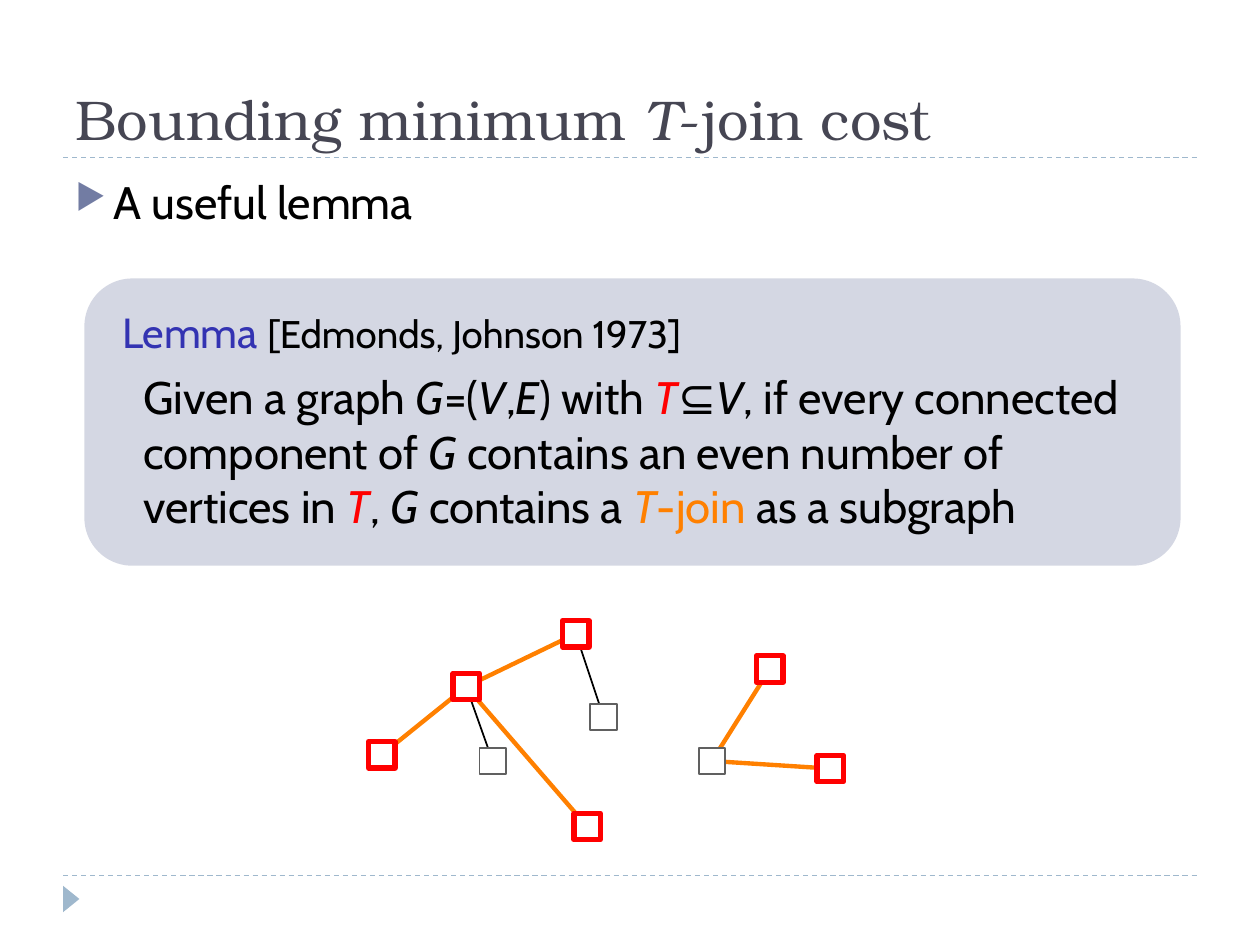
from dataclasses import dataclass

from lxml import etree
from pptx import Presentation
from pptx import util as u
from pptx.dml.color import RGBColor
from pptx.enum import dml, shapes, text
from pptx.oxml.ns import qn

Inches, Pt = u.Inches, u.Pt


@dataclass(frozen=True)
class Theme:
    head_font: str = "TeX Gyre Bonum"
    body_font: str = "Cabin"
    title: str = "464653"
    ink: str = "000000"
    white: str = "FFFFFF"
    accent: str = "727CA3"
    rule: str = "9FB8CD"
    lemma: str = "3333B2"
    terminal: str = "FF0000"
    join: str = "FF8000"
    vertex: str = "606060"
    title_size: int = 32
    body_size: int = 26
    lemma_size: int = 24
    cite_size: int = 22


T = Theme()


def rgb(value):
    return RGBColor.from_string(value)


def sub(parent, tag, **attrs):
    return etree.SubElement(parent, qn(tag), attrs)


def add_shape(s, kind, box, fill, line=None, width=1):
    sp = s.shapes.add_shape(kind, *map(Inches, box))
    sp.shadow.inherit = False
    sp.fill.solid()
    sp.fill.fore_color.rgb = rgb(fill)
    if line:
        sp.line.color.rgb = rgb(line)
        sp.line.width = Pt(width)
    else:
        sp.line.fill.background()
    return sp


def add_line(s, start, end, color, width):
    c = s.shapes.add_connector(shapes.MSO_CONNECTOR.STRAIGHT,
                               *map(Inches, (*start, *end)))
    c.line.color.rgb = rgb(color)
    c.line.width = Pt(width)
    sub(c._element.spPr, "a:effectLst")
    return c


def add_text(s, box, runs, size, font=T.body_font, before=0,
             anchor=text.MSO_ANCHOR.TOP):
    """Each run is (text, format); *stars* in its text mark italics."""
    tf = s.shapes.add_textbox(*map(Inches, box)).text_frame
    tf.word_wrap = True
    tf.vertical_anchor = anchor
    p = tf.paragraphs[0]
    p.space_before = Pt(before)
    for words, fmt in runs:
        for i, part in enumerate(words.split("*")):
            if part:
                r = p.add_run()
                r.text = part
                r.font.color.rgb = rgb(fmt.get("color", T.ink))
                values = {"name": font, "size": Pt(fmt.get("size", size)),
                          "italic": i % 2 == 1}
                for name, value in values.items():
                    setattr(r.font, name, value)
    return p


def add_frame(s, left, width):
    """Dashed rules and the footer marker."""
    for y in (6.95, 1.25):
        c = add_line(s, (left, y), (left + width, y), T.rule, 0.75)
        c.line.dash_style = dml.MSO_LINE.DASH
    marker = add_shape(s, shapes.MSO_SHAPE.ISOSCELES_TRIANGLE,
                       (left - 0.04, 7.07, 0.21, 0.13), T.rule)
    marker.rotation = 90


def add_heading(s, left, width):
    """Title above the rule, bullet below it."""
    add_text(s, (left, 0.17, width, 1.08),
             [("Bounding minimum *T*-join cost", {"color": T.title})],
             T.title_size, T.head_font, anchor=text.MSO_ANCHOR.BOTTOM)
    p = add_text(s, (left, 1.33, width, 0.6), [("A useful lemma", {})],
                 T.body_size, before=6)
    pPr = p._p.get_or_add_pPr()
    indent = Inches(0.3)
    pPr.set("marL", str(indent))
    pPr.set("indent", str(-indent))
    sub(sub(pPr, "a:buClr"), "a:srgbClr", val=T.accent)
    sub(pPr, "a:buSzPct", val="76000")
    sub(pPr, "a:buChar", char="▶")


def add_lemma(s, left, top, width, height):
    """Tinted panel with the lemma's name and statement."""
    panel = add_shape(s, shapes.MSO_SHAPE.ROUNDED_RECTANGLE,
                      (left, top, width, height), T.accent)
    color = panel.fill._xPr.find(qn("a:solidFill")).find(qn("a:srgbClr"))
    sub(color, "a:alpha", val="30000")
    add_text(s, (left + 0.2, top + 0.17, width - 0.75, 0.5),
             [("Lemma ", {"color": T.lemma}),
              ("[Edmonds, Johnson 1973]", {"size": T.cite_size})],
             T.lemma_size, before=10)
    red, orange = {"color": T.terminal}, {"color": T.join}
    add_text(s, (left + 0.37, top + 0.67, width - 0.57, 1.45),
             [("Given a graph *G*=(*V*,*E*) with ", {}), ("*T*", red),
              ("⊆*V*, if every connected component of *G* contains "
               "an even number of vertices in ", {}), ("*T*", red),
              (", *G* contains a ", {}), ("*T*-join", orange),
              (" as a subgraph", {})],
             T.body_size, before=10)


def add_graph(s, left, top):
    """Two components; terminals are red, join edges orange."""
    side = 0.21
    # name: (centre x, centre y, is terminal)
    vertices = {
        "inner": (0.98, 1.11, False), "hub": (0.77, 0.52, True),
        "peak": (1.64, 0.10, True), "west": (0.10, 1.06, True),
        "south": (1.73, 1.63, True), "north": (3.18, 0.38, True),
        "centre": (2.72, 1.11, False), "east": (3.66, 1.17, True),
        "leaf": (1.86, 0.76, False),
    }
    # from, to, is in the join
    edges = [
        ("south", "hub", True), ("hub", "west", True),
        ("inner", "hub", False), ("peak", "hub", True),
        ("peak", "leaf", False), ("north", "centre", True),
        ("east", "centre", True),
    ]
    at = {name: (left + x, top + y) for name, (x, y, _) in vertices.items()}
    for a, b, joined in edges:
        add_line(s, at[a], at[b], *((T.join, 2.5) if joined else (T.ink, 1)))
    for name, (_, _, terminal) in vertices.items():
        x, y = at[name]
        add_shape(s, shapes.MSO_SHAPE.RECTANGLE,
                  (x - side / 2, y - side / 2, side, side), T.white,
                  *((T.terminal, 3) if terminal else (T.vertex, 1)))


def main():
    prs = Presentation()
    prs.slide_width, prs.slide_height = Inches(10), Inches(7.5)
    s = prs.slides.add_slide(prs.slide_layouts[6])
    add_frame(s, 0.5, 9)
    add_heading(s, 0.5, 9)
    add_lemma(s, 0.67, 2.21, 8.7, 2.28)
    add_graph(s, 2.93, 4.93)
    prs.save("out.pptx")


if __name__ == "__main__":
    main()
